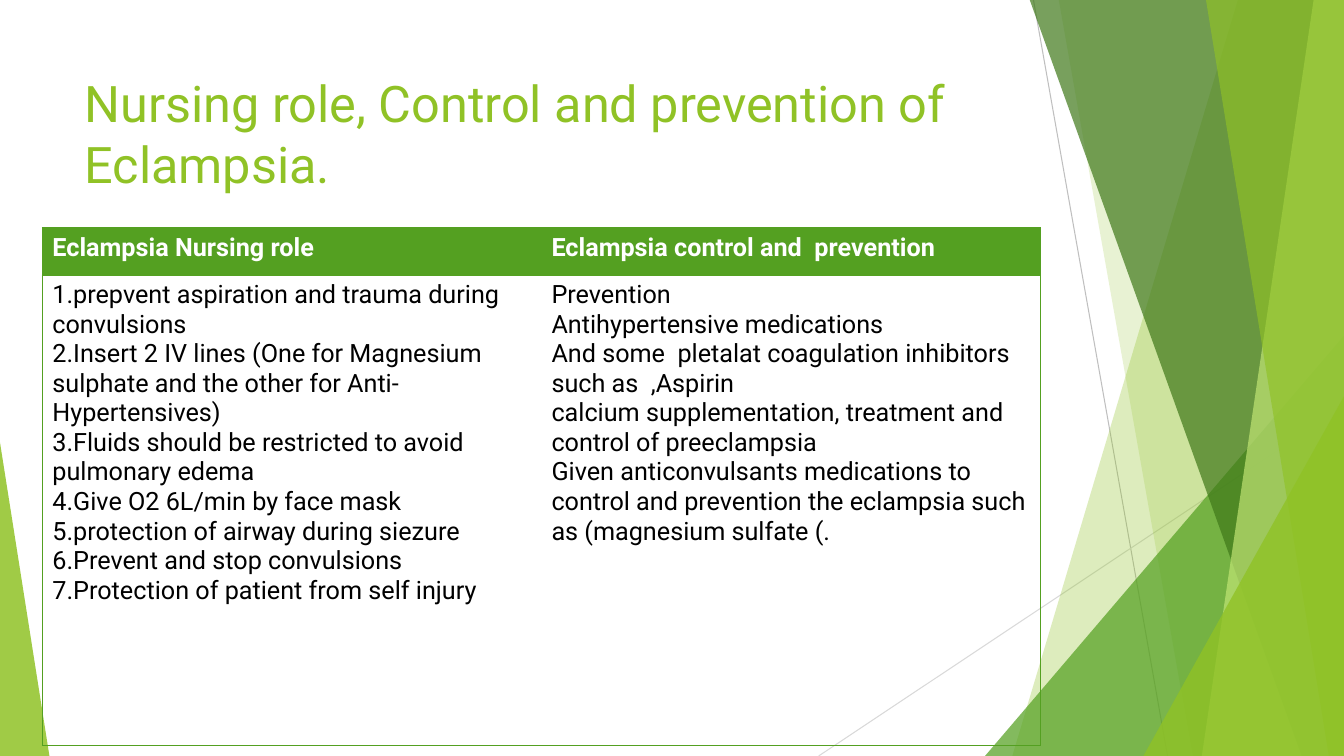
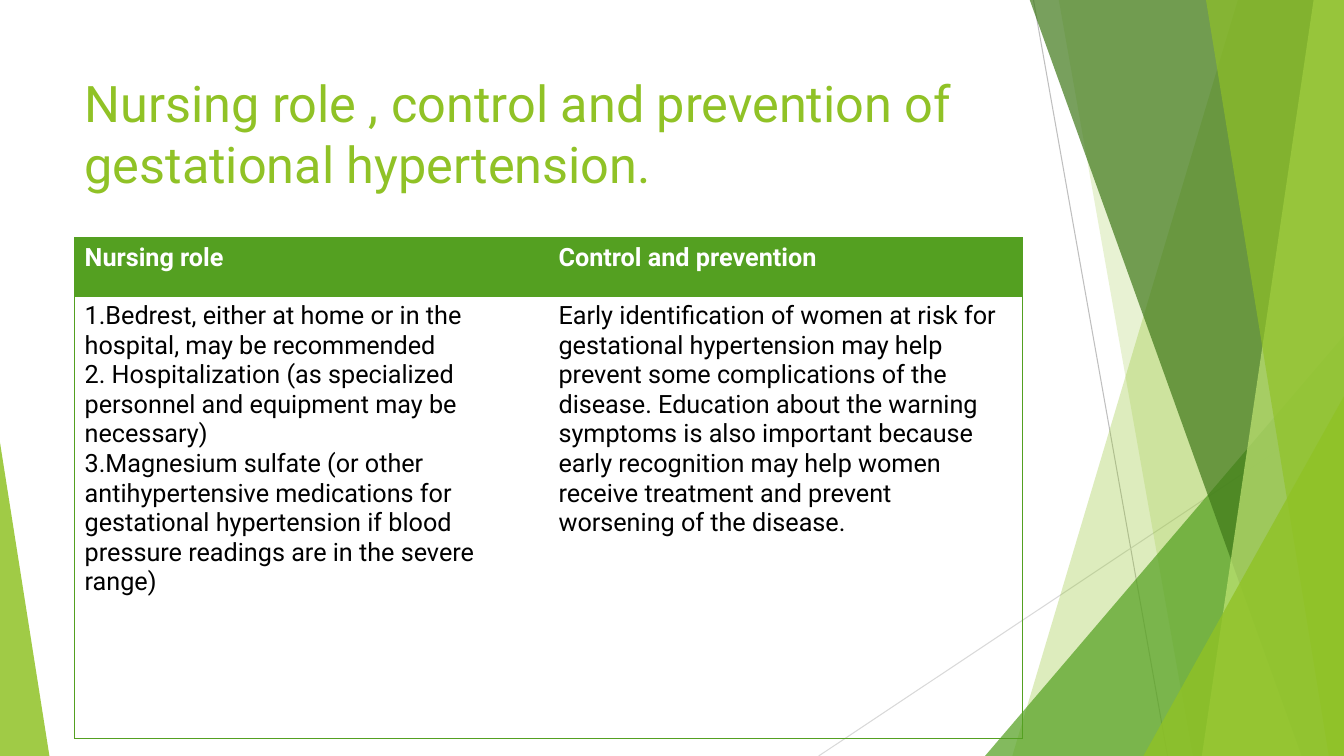
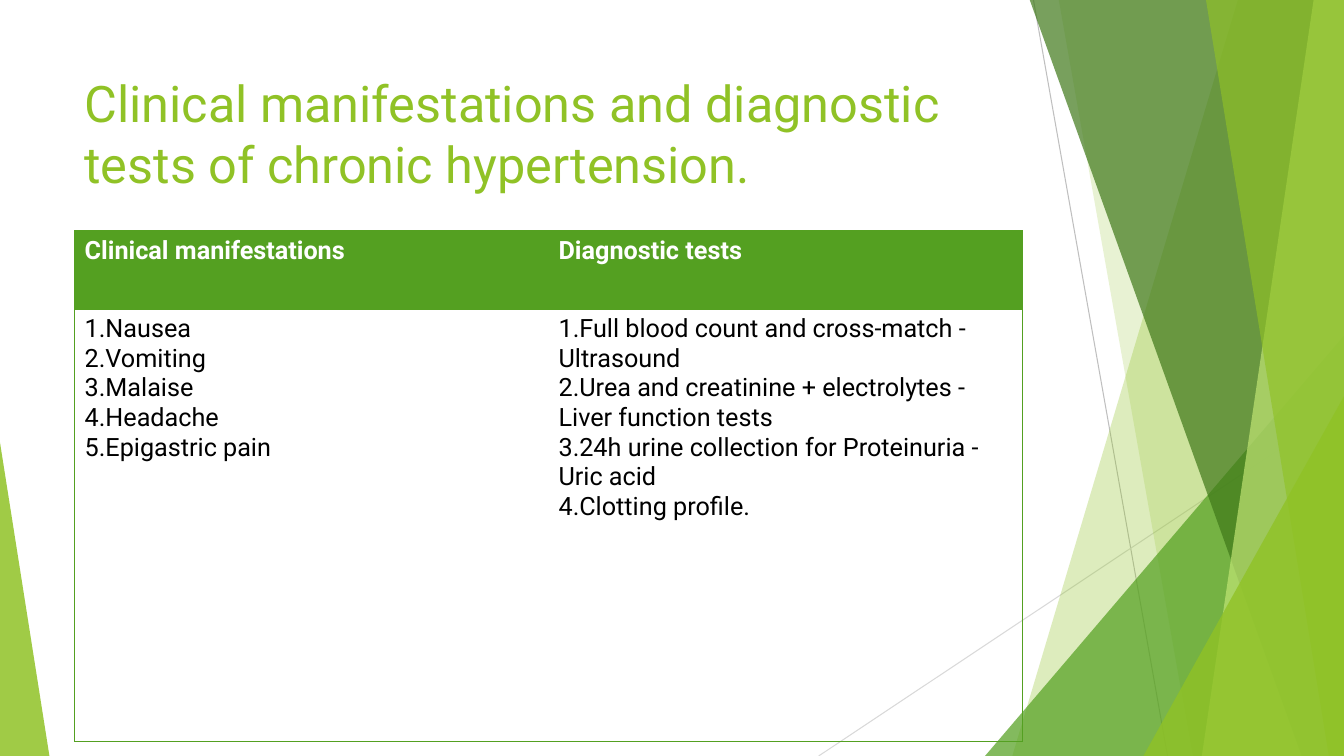
from lxml import etree
from pptx import Presentation
from pptx.dml.color import RGBColor
from pptx.enum.shapes import MSO_CONNECTOR, MSO_SHAPE
from pptx.enum.text import MSO_ANCHOR
from pptx.oxml.ns import qn
from pptx.util import Inches, Pt

# Shared look
FONT = "Roboto"
LIME = RGBColor(0x90, 0xC2, 0x26)
GREEN = RGBColor(0x54, 0xA0, 0x21)
DARK_GREEN = RGBColor(0x3F, 0x78, 0x19)
PALE_LIME = RGBColor(0xC0, 0xE4, 0x74)
GREY = RGBColor(0xBF, 0xBF, 0xBF)
LIGHT_GREY = RGBColor(0xD9, 0xD9, 0xD9)
WHITE = RGBColor(0xFF, 0xFF, 0xFF)
BLACK = RGBColor(0, 0, 0)
PAGE_WIDTH, PAGE_HEIGHT = 13.33, 7.5
BAND_TOP = -0.01
TITLE_BOX = (0.74, 0.67, 9.4, 1.44)
NO_STYLE = "{2D5ABB26-0587-4C30-8999-92F81FD0307C}"

# Each page: title, table box, header height, two columns of (heading, numbered, lines)
PAGES = [
    ("Nursing role, Control and prevention of Eclampsia.",
     (0.42, 2.26, 9.9, 5.14), 0.47, [
         ("Eclampsia Nursing role", True, [
             "prepvent aspiration and trauma during convulsions",
             "Insert 2 IV lines (One for Magnesium sulphate and the other "
             "for Anti-Hypertensives)",
             "Fluids should be restricted to avoid pulmonary edema",
             "Give O2 6L/min by face mask",
             "protection of airway during siezure",
             "Prevent and stop convulsions",
             "Protection of patient from self injury"]),
         ("Eclampsia control and  prevention", False, [
             "Prevention",
             "Antihypertensive medications",
             "And some  pletalat coagulation inhibitors such as  ,Aspirin",
             "calcium supplementation, treatment and control of preeclampsia",
             "Given anticonvulsants medications to control and prevention the "
             "eclampsia such as (magnesium sulfate (."])]),
    ("Nursing role , control and prevention of gestational hypertension.",
     (0.74, 2.36, 9.4, 4.97), 0.58, [
         ("Nursing role", True, [
             "Bedrest, either at home or in the hospital, may be recommended",
             " Hospitalization (as specialized personnel and equipment may be "
             "necessary)",
             "Magnesium sulfate (or other antihypertensive medications for "
             "gestational hypertension if blood pressure readings are in the "
             "severe range)"]),
         ("Control and prevention", False, [
             "Early identification of women at risk for gestational "
             "hypertension may help prevent some complications of the disease. "
             "Education about the warning symptoms is also important because "
             "early recognition may help women receive treatment and prevent "
             "worsening of the disease."])]),
    ("Clinical manifestations and diagnostic tests of chronic hypertension.",
     (0.74, 2.29, 9.4, 5.07), 0.78, [
         ("Clinical manifestations", True, [
             "Nausea", "Vomiting", "Malaise", "Headache", "Epigastric pain"]),
         ("Diagnostic tests", True, [
             "Full blood count and cross-match - Ultrasound",
             "Urea and creatinine + electrolytes - Liver function tests",
             "24h urine collection for Proteinuria - Uric acid",
             "Clotting profile."])]),
]


def paint(shape, color, opacity):
    """Fill a shape with a see-through colour and no outline."""
    shape.shadow.inherit = False
    shape.line.fill.background()
    shape.fill.solid()
    shape.fill.fore_color.rgb = color
    color_xml = shape._element.spPr.find(qn("a:solidFill"))[0]
    etree.SubElement(color_xml, qn("a:alpha"), val=str(opacity * 1000))


def add_thin_line(page, start, end, color):
    line = page.shapes.add_connector(
        MSO_CONNECTOR.STRAIGHT, *[Inches(n) for n in (*start, *end)])
    line.line.color.rgb = color
    line.line.width = Pt(0.75)
    etree.SubElement(line._element.spPr, qn("a:effectLst"))


def add_band(page, top_x, bottom_x, color, opacity):
    """A full-height band from a slanted left edge to the page's right edge."""
    corners = [(Inches(x), Inches(y)) for x, y in (
        (top_x, BAND_TOP), (PAGE_WIDTH, BAND_TOP),
        (PAGE_WIDTH, PAGE_HEIGHT), (bottom_x, PAGE_HEIGHT))]
    builder = page.shapes.build_freeform(*corners[0])
    builder.add_line_segments(corners[1:], close=True)
    paint(builder.convert_to_shape(), color, opacity)


def add_corner(page, left, top, width, apex, color, opacity):
    """A triangle standing on the bottom edge; apex 0 is left, 1 is right."""
    corner = page.shapes.add_shape(
        MSO_SHAPE.ISOSCELES_TRIANGLE, Inches(left), Inches(top),
        Inches(width), Inches(PAGE_HEIGHT - top))
    corner.adjustments[0] = apex
    paint(corner, color, opacity)


def add_backdrop(page):
    add_thin_line(page, (10.25, 0), (11.58, PAGE_HEIGHT), GREY)
    add_thin_line(page, (PAGE_WIDTH, 4.03), (8.12, PAGE_HEIGHT), LIGHT_GREY)
    add_band(page, 12.28, 10.04, LIME, 30)
    add_band(page, 10.5, 11.83, LIME, 20)
    add_corner(page, 9.77, 3.33, 3.56, 1, GREEN, 72)
    add_band(page, 10.21, 12.91, DARK_GREEN, 70)
    add_band(page, 13.03, 11.92, PALE_LIME, 70)
    add_band(page, 11.96, 13.18, LIME, 65)
    add_corner(page, 11.34, 3.93, 1.99, 1, LIME, 80)
    add_corner(page, 0, 4.39, 0.49, 0, LIME, 85)


def style_font(para, size, color, bold=False):
    para.font.name = FONT
    para.font.size = Pt(size)
    para.font.color.rgb = color
    para.font.bold = bold


def add_title(page, text, box):
    frame = page.shapes.add_textbox(*[Inches(n) for n in box]).text_frame
    frame.word_wrap = True
    frame.vertical_anchor = MSO_ANCHOR.TOP
    frame.text = text
    style_font(frame.paragraphs[0], 36, LIME)


def add_borders(cell, sides):
    for side in sides:
        edge = etree.SubElement(cell._tc.get_or_add_tcPr(), qn(f"a:ln{side}"),
                                w=str(Pt(1)))
        fill = etree.SubElement(edge, qn("a:solidFill"))
        etree.SubElement(fill, qn("a:srgbClr"), val=str(GREEN))


def fill_body(cell, lines, numbered):
    cell.text = "\n".join(lines)
    for para in cell.text_frame.paragraphs:
        style_font(para, 18, BLACK)
        if numbered:
            props = para._p.get_or_add_pPr()
            props.set("marL", "0")
            props.set("indent", "0")
            number = etree.Element(qn("a:buAutoNum"), type="arabicPeriod")
            props.insert(0, number)


def add_two_column_table(page, box, header_height, columns):
    frame = page.shapes.add_table(2, 2, *[Inches(n) for n in box])
    table = frame.table
    table.first_row = table.horz_banding = False
    table._tbl.tblPr.find(qn("a:tableStyleId")).text = NO_STYLE
    table.rows[0].height = Inches(header_height)
    table.rows[1].height = Inches(box[3] - header_height)
    for index, (heading, numbered, lines) in enumerate(columns):
        table.columns[index].width = Inches(box[2] / 2)
        outer_side = "LR"[index]
        header, body = table.cell(0, index), table.cell(1, index)
        # Header cell
        add_borders(header, outer_side + "T")
        header.fill.solid()
        header.fill.fore_color.rgb = GREEN
        header.text = heading
        style_font(header.text_frame.paragraphs[0], 18, WHITE, bold=True)
        # Body cell
        add_borders(body, outer_side + "TB")
        body.fill.background()
        fill_body(body, lines, numbered)


def main():
    deck = Presentation()
    deck.slide_width = Inches(PAGE_WIDTH)
    deck.slide_height = Inches(PAGE_HEIGHT)
    for title, box, header_height, columns in PAGES:
        page = deck.slides.add_slide(deck.slide_layouts[6])
        add_backdrop(page)
        add_title(page, title, TITLE_BOX)
        add_two_column_table(page, box, header_height, columns)
    deck.save("out.pptx")


if __name__ == "__main__":
    main()
